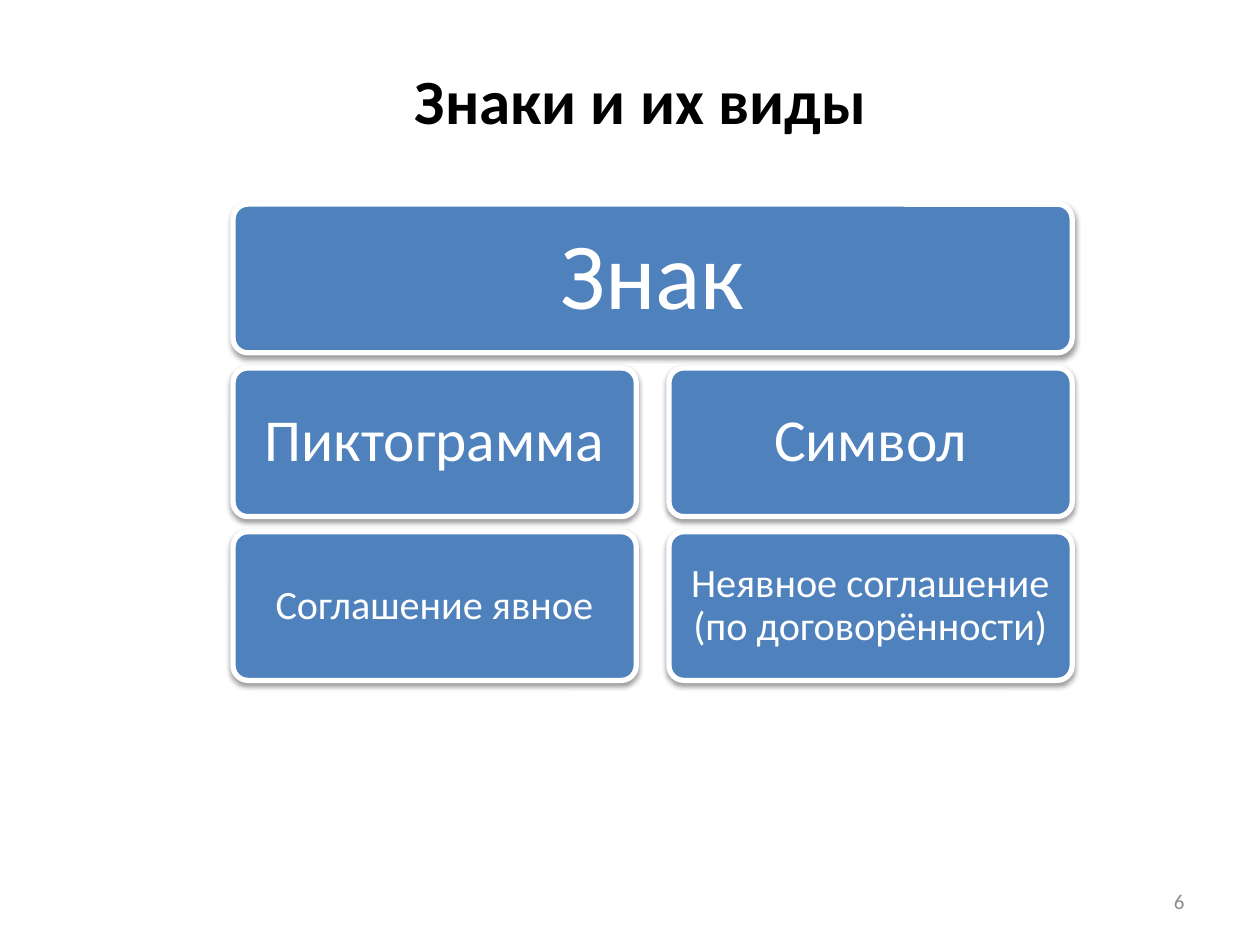
from lxml import etree
from pptx import Presentation
from pptx.dml.color import RGBColor
from pptx.enum.shapes import MSO_SHAPE
from pptx.enum.text import MSO_ANCHOR, PP_ALIGN
from pptx.oxml.ns import qn
from pptx.util import Inches, Pt

ROUNDED = MSO_SHAPE.ROUNDED_RECTANGLE
MIDDLE = MSO_ANCHOR.MIDDLE
CENTER, RIGHT = PP_ALIGN.CENTER, PP_ALIGN.RIGHT
BLUE = RGBColor(0x4F, 0x81, 0xBD)
WHITE = RGBColor(0xFF, 0xFF, 0xFF)
BLACK = RGBColor(0x00, 0x00, 0x00)
GRAY = RGBColor(0x8C, 0x8C, 0x8C)

LEFT, TOP = 1.85, 1.62
BOX_WIDTH, BOX_HEIGHT = 3.2, 1.18
COLUMN_STEP, ROW_STEP = 3.46, 1.3


def write(shape, text, size, color, align, bold=False):
    frame = shape.text_frame
    frame.word_wrap = True
    frame.vertical_anchor = MIDDLE
    para = frame.paragraphs[0]
    para.text = text
    para.alignment = align
    para.font.name = "Calibri"
    para.font.size = Pt(size)
    para.font.bold = bold
    para.font.color.rgb = color
    return frame


def add_shadow(shape):
    shape.shadow.inherit = False
    effects = shape._element.spPr.find(qn("a:effectLst"))
    shadow = etree.SubElement(
        effects, qn("a:outerShdw"), blurRad=str(Pt(3.1)), dist=str(Pt(1.6)),
        dir="5400000", rotWithShape="0")
    tint = etree.SubElement(shadow, qn("a:srgbClr"), val=str(BLACK))
    etree.SubElement(tint, qn("a:alpha"), val="38000")


deck = Presentation()
deck.slide_width, deck.slide_height = Inches(10), Inches(7.5)
page = deck.slides.add_slide(deck.slide_layouts[6])

title = page.shapes.add_textbox(Inches(0.67), Inches(0.44), Inches(8.83), Inches(0.69))
write(title, "Знаки и их виды", 36, BLACK, CENTER, bold=True)

levels = [
    (["Знак"], 54, 0.26),
    (["Пиктограмма", "Символ"], 34, 0.17),
    (["Соглашение явное", "Неявное соглашение (по договорённости)"], 23, 0.13),
]
for row, (labels, size, inset) in enumerate(levels):
    span = 3 - len(labels)
    width = BOX_WIDTH + (span - 1) * COLUMN_STEP
    for column, label in enumerate(labels):
        box = page.shapes.add_shape(
            ROUNDED, Inches(LEFT + column * COLUMN_STEP), Inches(TOP + row * ROW_STEP),
            Inches(width), Inches(BOX_HEIGHT))
        box.adjustments[0] = 0.1
        box.fill.solid()
        box.fill.fore_color.rgb = BLUE
        box.line.color.rgb = WHITE
        box.line.width = Pt(3)
        add_shadow(box)
        frame = write(box, label, size, WHITE, CENTER)
        frame.margin_left = frame.margin_right = Inches(inset)
        frame.margin_top = frame.margin_bottom = Inches(inset)
        frame.paragraphs[0].line_spacing = 0.9

number = page.shapes.add_textbox(Inches(7.17), Inches(6.95), Inches(2.33), Inches(0.4))
write(number, "6", 12, GRAY, RIGHT)

deck.save("out.pptx")
